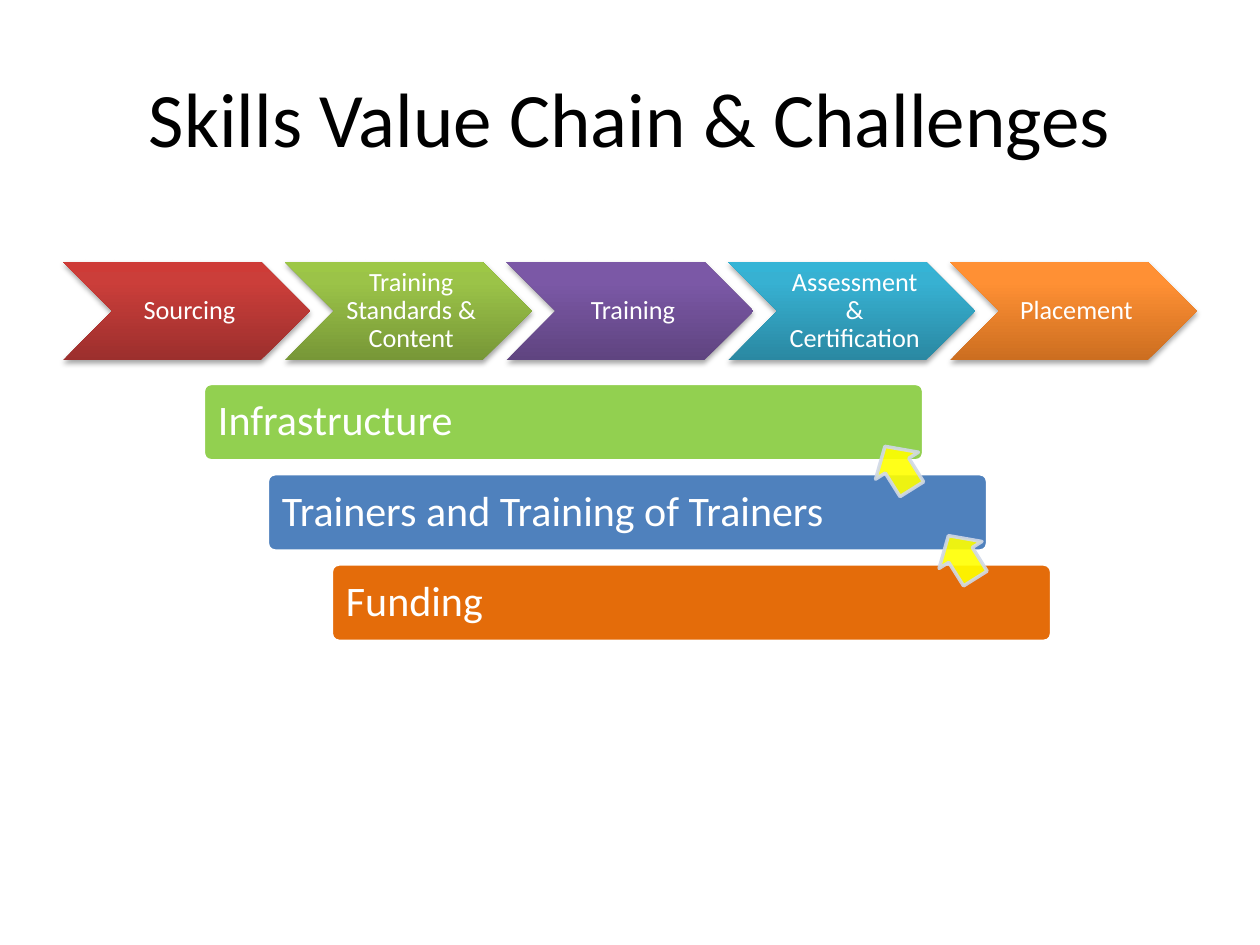
"""Build the slide that shows the skills value chain and its shared challenges."""

import dataclasses

import lxml.etree
import pptx
import pptx.dml.color
import pptx.enum.shapes
import pptx.enum.text
import pptx.oxml.ns
import pptx.util

Cm = pptx.util.Cm
Pt = pptx.util.Pt
MSO_SHAPE = pptx.enum.shapes.MSO_SHAPE
PP_ALIGN = pptx.enum.text.PP_ALIGN


@dataclasses.dataclass(frozen=True)
class Theme:
    font: str = "Calibri"
    title_size: int = 44
    stage_size: int = 15
    bar_size: int = 24
    dark: str = "000000"
    light: str = "FFFFFF"
    arrow_fill: str = "FFFF00"
    arrow_line: str = "D0D8E8"
    line_width: int = 2


THEME = Theme()

STAGES = [
    ("Sourcing", ("9C2F2D", "CB3E3A", "CE3B37")),
    ("Training Standards & Content", ("779737", "9BC348", "9DC746")),
    ("Training", ("5F4480", "7B58A6", "7C57A8")),
    ("Assessment & Certification", ("2A88A2", "37B1D2", "34B4D6")),
    ("Placement", ("CC6E20", "FF9034", "FF9136")),
]

CHALLENGES = [
    ("Infrastructure", "92D050"),
    ("Trainers and Training of Trainers", "4F81BD"),
    ("Funding", "E46C0A"),
]


def rgb(color):
    """Return a colour object for a hexadecimal string."""
    return pptx.dml.color.RGBColor.from_string(color)


def add_element(parent, tag, **attributes):
    """Append a DrawingML element to a parent and return it."""
    element = lxml.etree.SubElement(parent, pptx.oxml.ns.qn(tag))
    for name, value in attributes.items():
        element.set(name, str(value))
    return element


def write_text(shape, text, *, size, color, align, margins, spacing=0.9):
    """Write one formatted paragraph into a shape, with margins in centimetres."""
    frame = shape.text_frame
    frame.word_wrap = True
    frame.auto_size = pptx.enum.text.MSO_AUTO_SIZE.NONE
    frame.vertical_anchor = pptx.enum.text.MSO_ANCHOR.MIDDLE
    frame.margin_left, frame.margin_top, frame.margin_right, frame.margin_bottom = map(Cm, margins)
    paragraph = frame.paragraphs[0]
    paragraph.alignment = align
    paragraph.line_spacing = spacing
    run = paragraph.add_run()
    run.text = text
    run.font.name = THEME.font
    run.font.size = Pt(size)
    run.font.color.rgb = rgb(color)


def add_preset(slide, kind, left, top, width, height, adjustments):
    """Add a preset shape without a shadow, with lengths in centimetres."""
    shape = slide.shapes.add_shape(kind, Cm(left), Cm(top), Cm(width), Cm(height))
    shape.shadow.inherit = False
    for index, value in enumerate(adjustments):
        shape.adjustments[index] = value
    return shape


def set_solid(shape, fill, line):
    """Give a shape a solid fill and a solid outline."""
    shape.fill.solid()
    shape.fill.fore_color.rgb = rgb(fill)
    shape.line.color.rgb = rgb(line)
    shape.line.width = Pt(THEME.line_width)


def set_gradient(shape, colors):
    """Fill a shape with a gradient that rises from the bottom edge."""
    shape.fill.gradient()
    shape.fill.gradient_angle = 90
    stops = shape._element.spPr.find(".//" + pptx.oxml.ns.qn("a:gsLst"))
    for stop in list(stops):
        stops.remove(stop)
    for position, color in zip((0, 80000, 100000), colors):
        add_element(add_element(stops, "a:gs", pos=position), "a:srgbClr", val=color)


def add_shadow(shape):
    """Put a soft shadow below a shape."""
    effects = shape._element.spPr.find(pptx.oxml.ns.qn("a:effectLst"))
    shadow = add_element(effects, "a:outerShdw", blurRad=Pt(3.1), dist=Pt(1.8),
                         dir=5400000, rotWithShape=0)
    color = add_element(shadow, "a:srgbClr", val=THEME.dark)
    add_element(color, "a:alpha", val=35000)


def add_title(slide, text):
    """Place and format the title placeholder."""
    title = slide.shapes.title
    title.left, title.top, title.width, title.height = Cm(1.27), Cm(0.76), Cm(22.86), Cm(3.18)
    write_text(title, text, size=THEME.title_size, color=THEME.dark,
               align=PP_ALIGN.CENTER, margins=(0.25, 0.13, 0.25, 0.13), spacing=1.0)


def add_stage(slide, index, text, colors):
    """Add one chevron of the value chain."""
    chevron = add_preset(slide, MSO_SHAPE.CHEVRON, 1.27 + 4.47 * index, 5.28, 4.98, 1.98, [0.5])
    set_gradient(chevron, colors)
    chevron.line.fill.background()
    add_shadow(chevron)
    write_text(chevron, text, size=THEME.stage_size, color=THEME.light,
               align=PP_ALIGN.CENTER, margins=(0.17, 0.05, 0.05, 0.05))


def add_challenge(slide, index, text, color):
    """Add one bar of the staggered challenges."""
    bar = add_preset(slide, MSO_SHAPE.ROUNDED_RECTANGLE,
                     4.1 + 1.29 * index, 7.73 + 1.82 * index, 14.52, 1.56, [0.1])
    set_solid(bar, color, THEME.light)
    write_text(bar, text, size=THEME.bar_size, color=THEME.light,
               align=PP_ALIGN.LEFT, margins=(0.25, 0.25, 1.9, 0.25))


def add_link_arrow(slide, index):
    """Add a translucent arrow from one bar back to the bar above."""
    arrow = add_preset(slide, MSO_SHAPE.DOWN_ARROW,
                       17.6 + 1.28 * index, 8.92 + 1.8 * index, 1.02, 1.02, [0.55, 0.45])
    arrow.rotation = 147.9
    set_solid(arrow, THEME.arrow_fill, THEME.arrow_line)
    for color in arrow._element.spPr.iter(pptx.oxml.ns.qn("a:srgbClr")):
        add_element(color, "a:alpha", val=90000)


def main():
    """Build and save the presentation."""
    presentation = pptx.Presentation()
    presentation.slide_width = Cm(25.4)
    presentation.slide_height = Cm(19.05)
    slide = presentation.slides.add_slide(presentation.slide_layouts[5])
    add_title(slide, "Skills Value Chain & Challenges")
    for index, (text, colors) in enumerate(STAGES):
        add_stage(slide, index, text, colors)
    for index, (text, color) in enumerate(CHALLENGES):
        add_challenge(slide, index, text, color)
    for index in range(len(CHALLENGES) - 1):
        add_link_arrow(slide, index)
    presentation.save("out.pptx")


if __name__ == "__main__":
    main()
